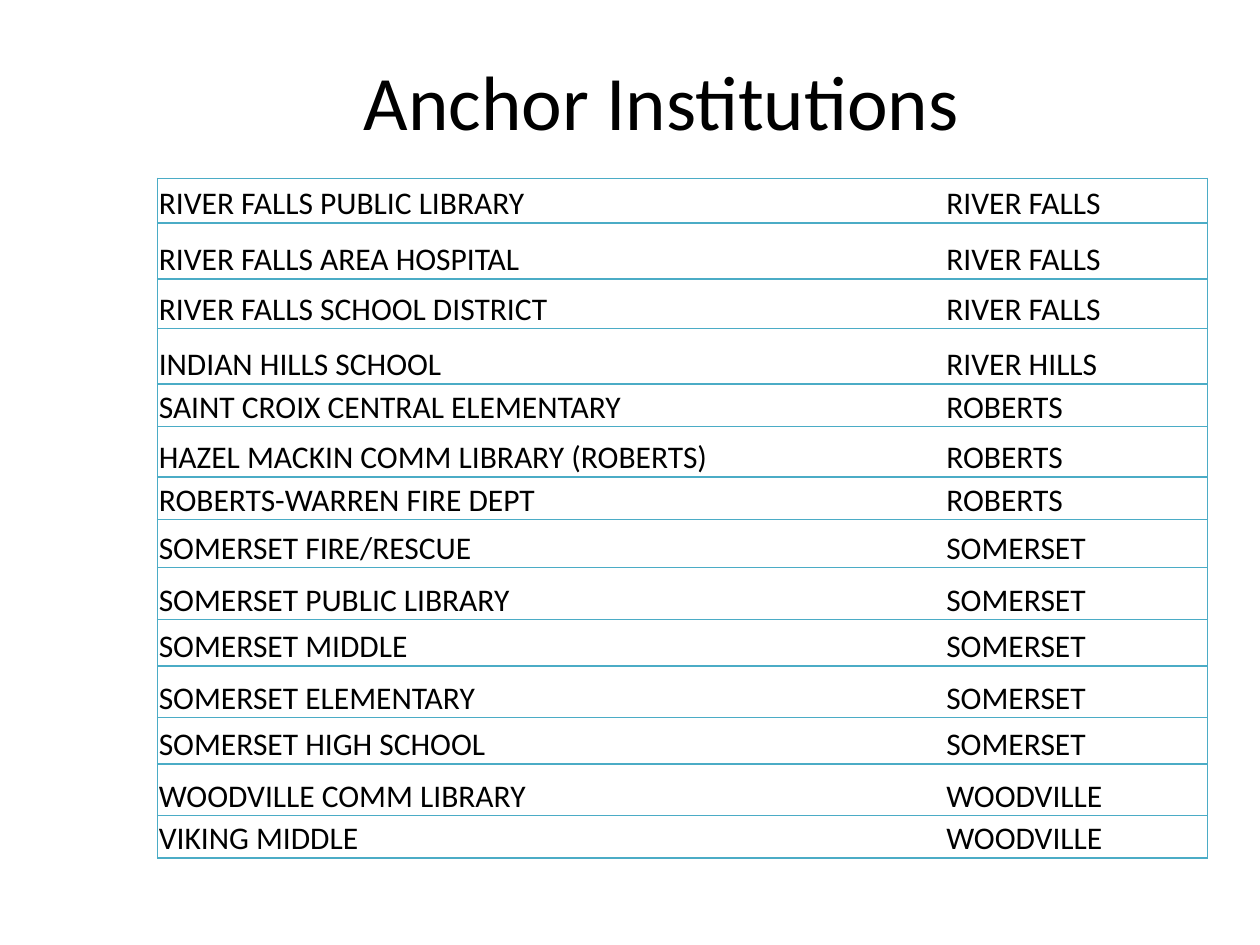
from lxml import etree
from pptx import Presentation
from pptx.dml.color import RGBColor
from pptx.enum import text
from pptx.oxml import ns
from pptx.util import Pt

INK, PAPER, TEAL = "000000", "FFFFFF", "4BACC6"
SITES = [
    ("RIVER FALLS PUBLIC LIBRARY", "RIVER FALLS", 25.4),
    ("RIVER FALLS AREA HOSPITAL", "RIVER FALLS", 32),
    ("RIVER FALLS SCHOOL DISTRICT", "RIVER FALLS", 28.4),
    ("INDIAN HILLS SCHOOL", "RIVER HILLS", 31.6),
    ("SAINT CROIX CENTRAL ELEMENTARY", "ROBERTS", 24.4),
    ("HAZEL MACKIN COMM LIBRARY (ROBERTS)", "ROBERTS", 28.8),
    ("ROBERTS-WARREN FIRE DEPT", "ROBERTS", 24.4),
    ("SOMERSET FIRE/RESCUE", "SOMERSET", 27.4),
    ("SOMERSET PUBLIC LIBRARY", "SOMERSET", 29.8),
    ("SOMERSET MIDDLE", "SOMERSET", 26.6),
    ("SOMERSET ELEMENTARY", "SOMERSET", 29.4),
    ("SOMERSET HIGH SCHOOL", "SOMERSET", 26.6),
    ("WOODVILLE COMM LIBRARY", "WOODVILLE", 29.4),
    ("VIKING MIDDLE", "WOODVILLE", 24.2),
]


def paint(color, code):
    """Set a colour format from a hex string."""
    color.rgb = RGBColor.from_string(code)


def apply(item, form):
    """Set each attribute named in a dict."""
    for name, value in form.items():
        setattr(item, name, value)


def style(para, size):
    """Give a paragraph its font."""
    apply(para.font, {"name": "Calibri", "size": Pt(size)})
    paint(para.font.color, INK)


def edge(cell, sides):
    """Rule the given sides of a cell and clear the others."""
    props = cell._tc.get_or_add_tcPr()
    for i, side in enumerate("LRTB"):
        line = etree.Element(ns.qn("a:ln" + side), w=str(Pt(1)))
        if side in sides:
            fill = etree.SubElement(line, ns.qn("a:solidFill"))
            etree.SubElement(fill, ns.qn("a:srgbClr"), val=TEAL)
        else:
            etree.SubElement(line, ns.qn("a:noFill"))
        props.insert(i, line)


def title(slide, words, left, top, width, height):
    """Place the slide title in its box."""
    shape = slide.shapes.title
    apply(shape, {"left": Pt(left), "top": Pt(top),
                  "width": Pt(width), "height": Pt(height)})
    frame = shape.text_frame
    frame.text = words
    frame.vertical_anchor = text.MSO_ANCHOR.MIDDLE
    para = frame.paragraphs[0]
    para.alignment = text.PP_ALIGN.CENTER
    style(para, 44)


def listing(slide, sites, left, top, width):
    """Place the table of institutions and their towns."""
    high = sum(site[-1] for site in sites)
    table = slide.shapes.add_table(
        len(sites), 2, Pt(left), Pt(top), Pt(width), Pt(high)).table
    apply(table, {"first_row": False, "horz_banding": False})
    for col, share in zip(table.columns, (0.75, 0.25)):
        col.width = Pt(width * share)
    form = {"margin_left": Pt(0.75), "margin_right": Pt(0.75),
            "margin_top": Pt(0.75), "margin_bottom": 0,
            "vertical_anchor": text.MSO_ANCHOR.BOTTOM}
    for row, (name, town, tall) in zip(table.rows, sites):
        row.height = Pt(tall)
        for cell, words, sides in zip(row.cells, (name, town), ("LTB", "RTB")):
            cell.text = words
            apply(cell, form)
            style(cell.text_frame.paragraphs[0], 18)
            cell.fill.solid()
            paint(cell.fill.fore_color, PAPER)
            edge(cell, sides)


def main():
    """Build and save the slide."""
    deck = Presentation()
    apply(deck, {"slide_width": Pt(720), "slide_height": Pt(540)})
    slide = deck.slides.add_slide(deck.slide_layouts[5])
    title(slide, "Anchor Institutions", 54, 12, 648, 90)
    listing(slide, SITES, 90, 102, 600)
    deck.save("out.pptx")


if __name__ == "__main__":
    main()
